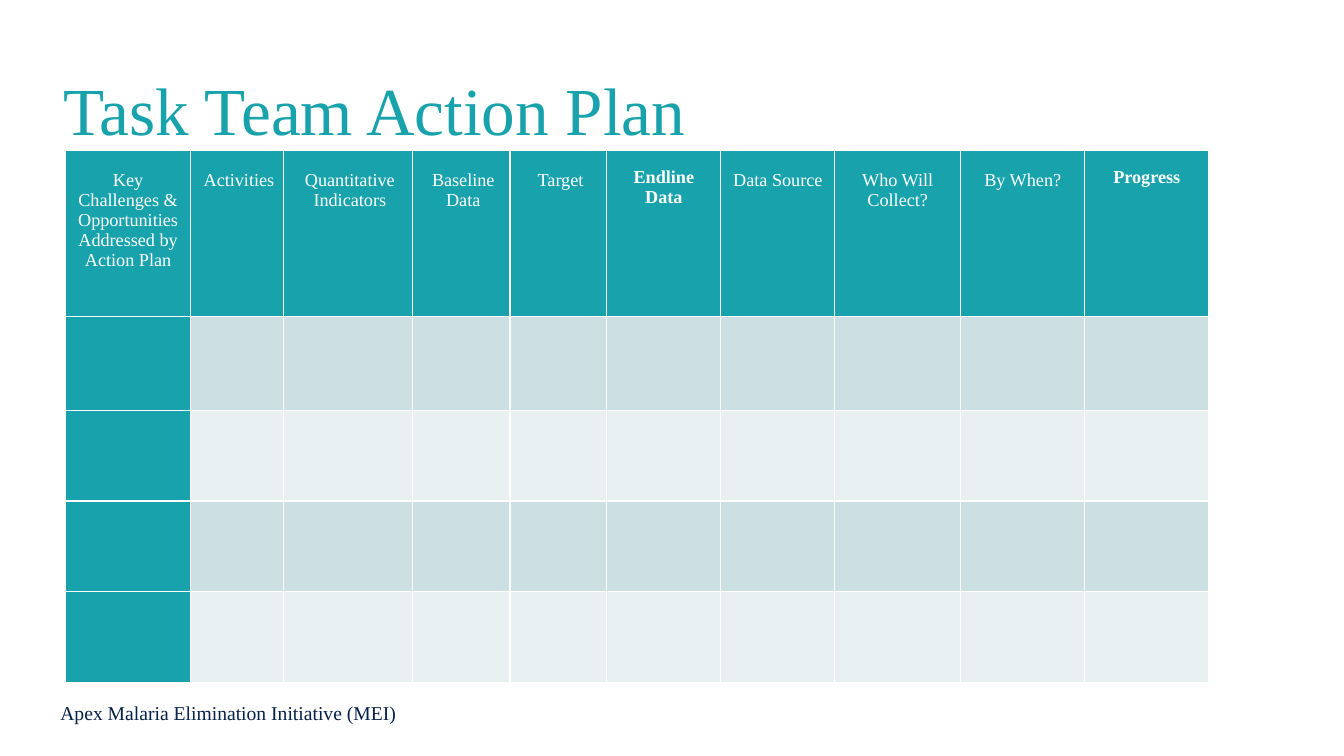
from lxml import etree
from pptx import Presentation
from pptx.dml.color import RGBColor
from pptx.enum.text import MSO_ANCHOR, MSO_AUTO_SIZE, PP_ALIGN
from pptx.oxml.ns import qn
from pptx.util import Inches, Pt

# Content
TITLE = "Task Team Action Plan"
FOOTER = "Apex Malaria Elimination Initiative (MEI)"
# heading, column width, bold, extra left margin
COLUMNS = [
    ("Key Challenges & Opportunities Addressed by Action Plan", 1.24, False, 0),
    ("Activities", 0.92, False, 0.04),
    ("Quantitative Indicators", 1.28, False, 0.04),
    ("Baseline Data", 0.97, False, 0.04),
    ("Target", 0.96, False, 0.04),
    ("Endline Data", 1.13, True, 0),
    ("Data Source", 1.13, False, 0),
    ("Who Will Collect?", 1.25, False, 0),
    ("By When?", 1.23, False, 0),
    ("Progress", 1.23, True, 0),
]
ROW_HEIGHTS = [1.65, 0.93, 0.9, 0.9, 0.9]

# Style
FONT = "Times New Roman"
TEAL = RGBColor(0x18, 0xA3, 0xAC)
NAVY = RGBColor(0x05, 0x20, 0x49)
WHITE = RGBColor(0xFF, 0xFF, 0xFF)
BANDS = [RGBColor(0xE8, 0xF0, 0xF1), RGBColor(0xCC, 0xE0, 0xE3)]
CENTER, LEFT = PP_ALIGN.CENTER, PP_ALIGN.LEFT
MIDDLE = MSO_ANCHOR.MIDDLE
NO_FIT = MSO_AUTO_SIZE.NONE


def write(tf, text, size, color, align=LEFT, bold=False):
    tf.text = text
    p = tf.paragraphs[0]
    p.alignment = align
    p.font.name, p.font.size, p.font.bold = FONT, Pt(size), bold
    p.font.color.rgb = color
    return p


def add_borders(cell):
    tcPr = cell._tc.get_or_add_tcPr()
    for i, side in enumerate(("lnL", "lnR", "lnT", "lnB")):
        ln = etree.Element(qn(f"a:{side}"), w=str(Pt(1)))
        fill = etree.SubElement(ln, qn("a:solidFill"))
        etree.SubElement(fill, qn("a:srgbClr"), val=str(WHITE))
        tcPr.insert(i, ln)


prs = Presentation()
prs.slide_width, prs.slide_height = Inches(13.33), Inches(7.5)
s = prs.slides.add_slide(prs.slide_layouts[5])

# Title
title = s.shapes.title
title.left, title.top = Inches(0.53), Inches(0.4)
title.width, title.height = Inches(12.45), Inches(1.45)
tf = title.text_frame
tf.auto_size, tf.vertical_anchor = NO_FIT, MIDDLE
write(tf, TITLE, 48, TEAL).line_spacing = 0.9

# Footer
tf = s.shapes.add_textbox(Inches(0.5), Inches(6.9), Inches(5.31), Inches(0.34)).text_frame
tf.word_wrap = True
write(tf, FOOTER, 14, NAVY)

# Action plan table
table = s.shapes.add_table(
    len(ROW_HEIGHTS), len(COLUMNS), Inches(0.65), Inches(1.49),
    Inches(sum(c[1] for c in COLUMNS)), Inches(sum(ROW_HEIGHTS))).table
for row, height in zip(table.rows, ROW_HEIGHTS):
    row.height = Inches(height)

for c, (heading, width, bold, shift) in enumerate(COLUMNS):
    table.columns[c].width = Inches(width)
    for r in range(len(ROW_HEIGHTS)):
        cell = table.cell(r, c)
        cell.fill.solid()
        cell.fill.fore_color.rgb = TEAL if r == 0 or c == 0 else BANDS[r % 2]
        add_borders(cell)
    # Heading cell
    cell = table.cell(0, c)
    cell.margin_left, cell.margin_right = Inches(0.07 + shift), Inches(0.07)
    cell.margin_top, cell.margin_bottom = Inches(0.17 if bold else 0.2), 0
    write(cell.text_frame, heading, 13, WHITE, CENTER, bold)

prs.save("out.pptx")
